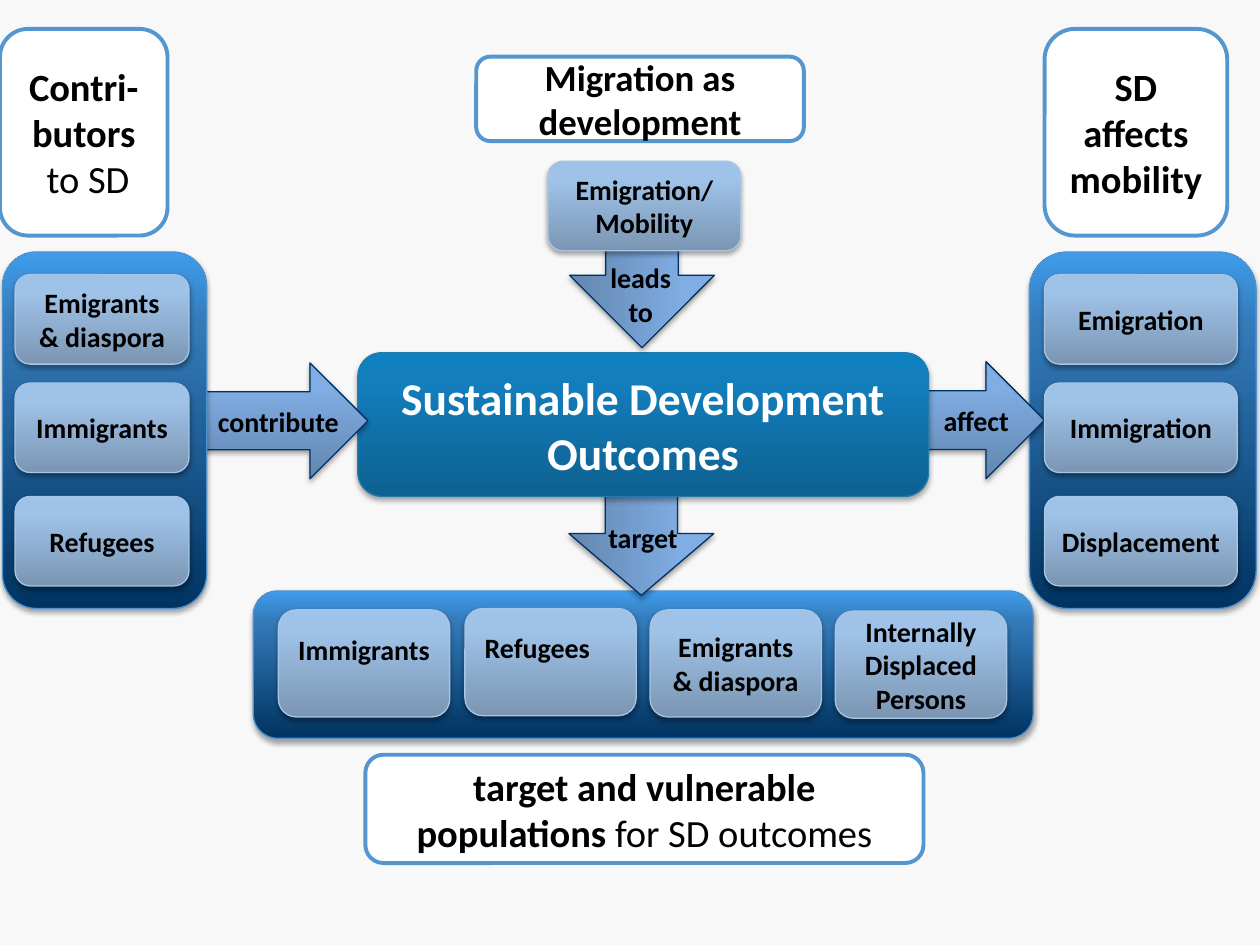
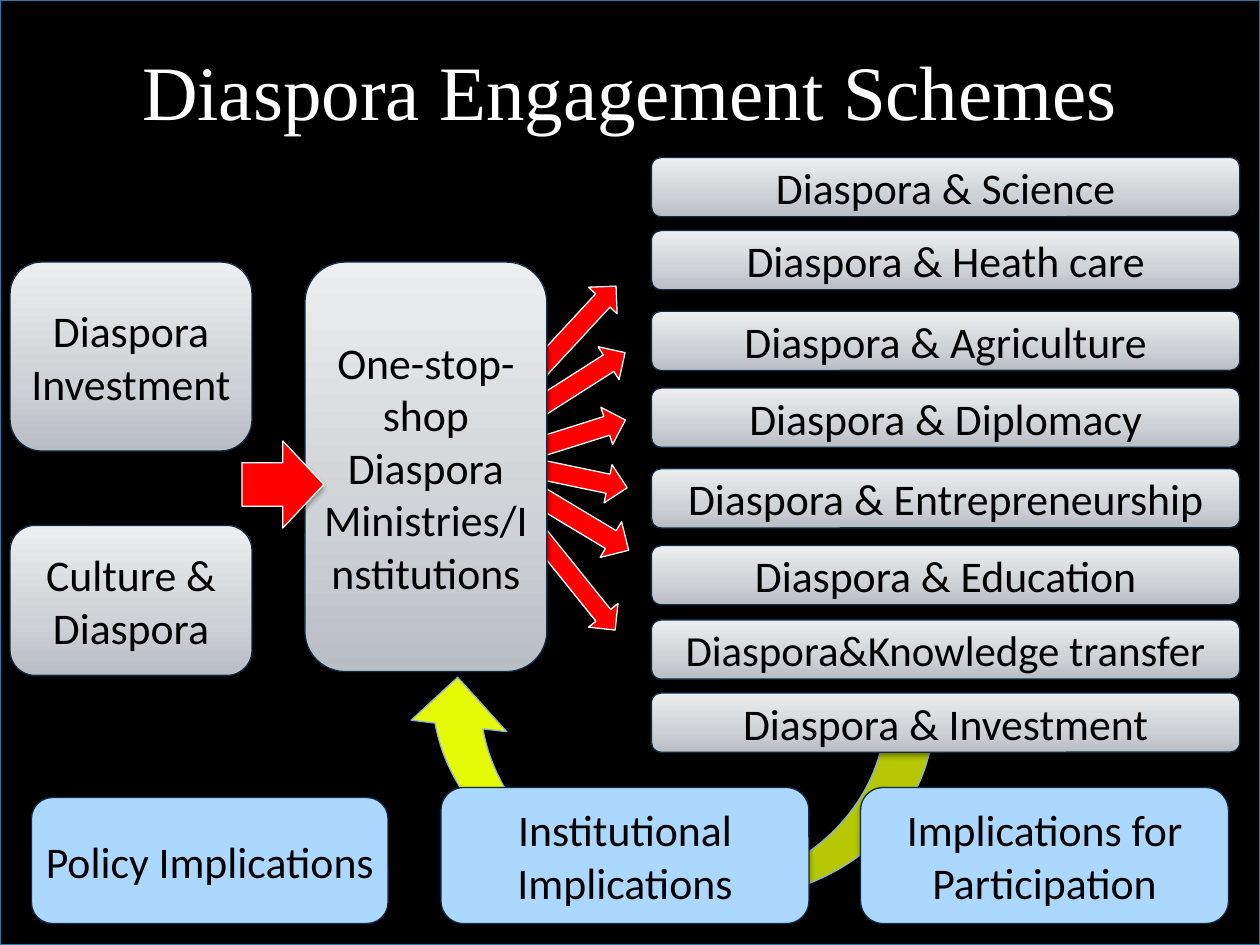
import copy

from pptx import Presentation
from pptx import util as u
from pptx.dml import color
from pptx.enum import shapes, text
from pptx.oxml import ns
from lxml import etree

COLORS = {
    "page": "F8F8F8", "black": "000000", "white": "FFFFFF", "red": "FF0000",
    "lime": "E4FB05", "sky": "ACD8FF", "navy": "003361", "ink": "122B43",
    "panel_line": "4F93CE", "tile_line": "A8C5E3", "core_line": "237BAD",
    "heading_line": "5496D0", "lime_line": "8BB0DC",
}
# Gradients run from bottom to top: (position, colour)
GRADIENTS = {
    "panel": [(0, "003361"), (0.8, "347BBA"), (1, "3F9CEB")],
    "arrow": [(0, "6386AF"), (0.8, "80ADE4"), (1, "7FAEE7")],
    "core": [(0, "0E6191"), (0.8, "127EBC"), (1, "0F80C0")],
    "tile": [(0, "7B96B3"), (0.8, "9FC2E8"), (1, "9FC3EB")],
    "silver": [(0, "B9BDC4"), (0.35, "CED1D5"), (1, "EDEEEF")],
}
# Shadows: (opacity %, distance in points)
FIRM, SOFT = (35, 1.8), (38, 1.6)
SMALL = {"size": u.Pt(16), "bold": True, "name": "Calibri"}
HEADING = {**SMALL, "size": u.Pt(22)}
LARGE = {"size": u.Pt(25), "bold": False, "name": "Calibri"}
STYLES = {
    "panel": {"fill": "panel", "line": "panel_line", "shadow": FIRM},
    "arrow": {"fill": "arrow", "line": "navy", "shadow": FIRM, "font": SMALL, "inset": 0},
    "core": {"fill": "core", "line": "core_line", "shadow": FIRM, "inset": 0,
             "font": {**SMALL, "size": u.Pt(26)}, "ink": "white"},
    "tile": {"fill": "tile", "line": "tile_line", "shadow": FIRM, "font": SMALL},
    "heading": {"fill": "white", "line": "heading_line", "width": 2.25, "font": HEADING},
    "subheading": {"fill": "white", "line": "heading_line", "width": 2.25,
                   "font": {**HEADING, "size": u.Pt(21)}},
    "label": {"font": SMALL},
    "backdrop": {"fill": "black", "line": "core_line", "shadow": FIRM},
    "loop": {"fill": "lime", "line": "lime_line", "shadow": FIRM},
    "pointer": {"fill": "red", "line": "white", "shadow": FIRM},
    "silver": {"fill": "silver", "line": "ink", "shadow": SOFT, "font": LARGE, "inset": 0},
    "snug": {"fill": "silver", "line": "ink", "shadow": SOFT, "inset": 0,
             "font": {**LARGE, "size": u.Pt(24.5)}},
    "sky": {"fill": "sky", "line": "ink", "shadow": SOFT, "font": LARGE, "inset": 0},
    "title": {"font": {"size": u.Pt(44), "bold": False, "name": "Times New Roman"},
              "ink": "white"},
}
ROUND = shapes.MSO_SHAPE.ROUNDED_RECTANGLE
ARROW = shapes.MSO_SHAPE.RIGHT_ARROW


def write(box, words, style, align="CENTER", anchor="MIDDLE", **margins):
    """Each line is a paragraph; a part after ~ is not bold."""
    look = STYLES[style]
    frame = box.text_frame
    side, edge = look.get("inset", 0.1), look.get("inset", 0.05)
    insets = {"left": side, "right": side, "top": edge, "bottom": edge, **margins}
    for name, value in insets.items():
        setattr(frame, "margin_" + name, u.Inches(value))
    frame.word_wrap = True
    frame.vertical_anchor = getattr(text.MSO_ANCHOR, anchor)
    for row, line in enumerate(words.split("\n")):
        para = frame.add_paragraph() if row else frame.paragraphs[0]
        para.alignment = getattr(text.PP_ALIGN, align)
        for part, piece in enumerate(line.split("~")):
            span = para.add_run()
            span.text = piece
            for name, value in look["font"].items():
                setattr(span.font, name, value)
            if part:
                span.font.bold = False
            span.font.color.rgb = color.RGBColor.from_string(COLORS[look.get("ink", "black")])


def draw(page, kind, place, style, words="", turn=0, **layout):
    look = STYLES[style]
    box = page.shapes.add_shape(kind, *map(u.Inches, place))
    box.rotation = turn
    if look["fill"] in GRADIENTS:
        stops = GRADIENTS[look["fill"]]
        box.fill.gradient()
        box.fill.gradient_angle = 90
        stop_list = box.element.spPr.find(".//" + ns.qn("a:gsLst"))
        stop_list.append(copy.deepcopy(stop_list[-1]))
        for stop, (position, shade) in zip(box.fill.gradient_stops, stops):
            stop.position = position
            stop.color.rgb = color.RGBColor.from_string(shade)
    else:
        box.fill.solid()
        box.fill.fore_color.rgb = color.RGBColor.from_string(COLORS[look["fill"]])
    box.line.color.rgb = color.RGBColor.from_string(COLORS[look["line"]])
    box.line.width = u.Pt(look.get("width", 0.75))
    box.shadow.inherit = False
    if "shadow" in look:
        opacity, distance = look["shadow"]
        effects = box.element.spPr.find(ns.qn("a:effectLst"))
        shadow = etree.SubElement(effects, ns.qn("a:outerShdw"), blurRad=str(u.Pt(3.1)),
                                  dist=str(u.Pt(distance)), dir="5400000", rotWithShape="0")
        shade = etree.SubElement(shadow, ns.qn("a:srgbClr"), val=COLORS["black"])
        etree.SubElement(shade, ns.qn("a:alpha"), val=str(opacity * 1000))
    if words:
        write(box, words, style, **layout)


deck = Presentation()
deck.slide_width, deck.slide_height = u.Inches(10), u.Inches(7.5)
pages = [deck.slides.add_slide(deck.slide_layouts[6]) for _ in range(2)]
for page in pages:
    page.background.fill.solid()
    page.background.fill.fore_color.rgb = color.RGBColor.from_string(COLORS["page"])
flow, schemes = pages

# Flow: panels, arrows and the central outcome
draw(flow, ROUND, (2.01, 4.69, 6.19, 1.17), "panel")
draw(flow, ROUND, (8.17, 2, 1.8, 2.83), "panel")
draw(flow, ARROW, (4.6, 3.66, 0.98, 1.15), "arrow", turn=90)
draw(flow, ARROW, (6.95, 2.87, 1.34, 0.93), "arrow", "affect", align="RIGHT", right=0.05)
draw(flow, ROUND, (2.84, 2.8, 4.53, 1.14), "core", "Sustainable Development\nOutcomes")
draw(flow, ARROW, (4.48, 1.57, 1.23, 1.15), "arrow", turn=90)
draw(flow, ARROW, (1.1, 2.88, 1.82, 0.92), "arrow", "contribute", align="RIGHT")
draw(flow, ROUND, (0.02, 2, 1.62, 2.83), "panel")

# Flow: labels over the vertical arrows
for place, words, align in [
    ((4.73, 4.08, 1.31, 0.37), "target", "LEFT"),
    ((4.51, 2.02, 1.15, 0.64), "leads\nto", "CENTER"),
]:
    label = flow.shapes.add_textbox(*map(u.Inches, place))
    write(label, words, "label", align, "TOP")

# Flow: tiles in the side panels
for left, width, names in [
    (0.12, 1.38, ["Emigrants & diaspora", "Immigrants", "Refugees"]),
    (8.29, 1.53, ["Emigration", "Immigration", "Displacement"]),
]:
    for top, name in zip((2.18, 3.04, 3.94), names):
        draw(flow, ROUND, (left, top, width, 0.71), "tile", name)

# Flow: tiles in the lower panel and at the top
for left, top, name, margins in [
    (2.21, 4.84, "Immigrants", {"bottom": 0.28}),
    (3.69, 4.83, "Refugees", {"bottom": 0.28, "right": 0.31}),
    (5.16, 4.84, "Emigrants & diaspora", {}),
    (6.63, 4.85, "Internally Displaced Persons", {}),
]:
    draw(flow, ROUND, (left, top, 1.36, 0.85), "tile", name, **margins)
draw(flow, ROUND, (4.35, 1.28, 1.53, 0.71), "tile", "Emigration/Mobility")

# Flow: white headings
draw(flow, ROUND, (0, 0.23, 1.33, 1.64), "heading", "Contri-butors\n~ to SD")
draw(flow, ROUND, (3.78, 0.45, 2.6, 0.67), "subheading", "Migration as development")
draw(flow, ROUND, (8.29, 0.23, 1.45, 1.64), "heading", "SD affects mobility")
draw(flow, ROUND, (2.9, 5.99, 4.43, 0.86), "heading",
     "target and vulnerable populations ~for SD outcomes")

# Schemes: backdrop, return loop and title
draw(schemes, shapes.MSO_SHAPE.RECTANGLE, (0, 0, 10, 7.5), "backdrop")
draw(schemes, shapes.MSO_SHAPE.CURVED_LEFT_ARROW, (4.47, 4.25, 1.53, 4.18), "loop", turn=96.9)
title = schemes.shapes.add_textbox(*map(u.Inches, (0.5, 0.09, 9, 1.25)))
write(title, "Diaspora Engagement Schemes", "title")

# Schemes: fan of arrows
for left, top, width, height, turn in [
    (3.85, 3.35, 1.14, 0.31, 342.5),
    (3.85, 3.6, 1.14, 0.31, 11.8),
    (3.68, 3.84, 1.41, 0.33, 31),
    (3.21, 2.85, 2, 0.31, 312.8),
    (3.91, 2.95, 1.14, 0.31, 327.5),
    (3.67, 4.27, 1.49, 0.3, 51.2),
]:
    draw(schemes, ARROW, (left, top, width, height), "pointer", turn=turn)

# Schemes: inputs and the one-stop shop
draw(schemes, ROUND, (0.08, 2.08, 1.92, 1.5), "silver", "Diaspora Investment")
draw(schemes, ROUND, (0.08, 4.17, 1.92, 1.19), "silver", "Culture & Diaspora")
draw(schemes, ROUND, (2.42, 2.08, 1.92, 3.25), "silver",
     "One-stop-shop\nDiaspora Ministries/Institutions")
draw(schemes, ARROW, (1.92, 3.5, 0.65, 0.69), "pointer")

# Schemes: list of fields
for top, name, style in [
    (1.25, "Diaspora & Science", "silver"),
    (1.83, "Diaspora & Heath care", "silver"),
    (2.47, "Diaspora & Agriculture", "silver"),
    (3.08, "Diaspora & Diplomacy", "silver"),
    (3.72, "Diaspora & Entrepreneurship", "silver"),
    (4.33, "Diaspora & Education", "silver"),
    (4.92, "Diaspora&Knowledge transfer", "snug"),
    (5.5, "Diaspora & Investment", "silver"),
]:
    draw(schemes, ROUND, (5.17, top, 4.67, 0.47), style, name)

# Schemes: implications
for place, words in [
    ((0.25, 6.33, 2.83, 1), "Policy Implications"),
    ((3.5, 6.25, 2.92, 1.08), "Institutional\nImplications"),
    ((6.83, 6.25, 2.92, 1.08), "Implications for Participation"),
]:
    draw(schemes, ROUND, place, "sky", words)

deck.save("out.pptx")
